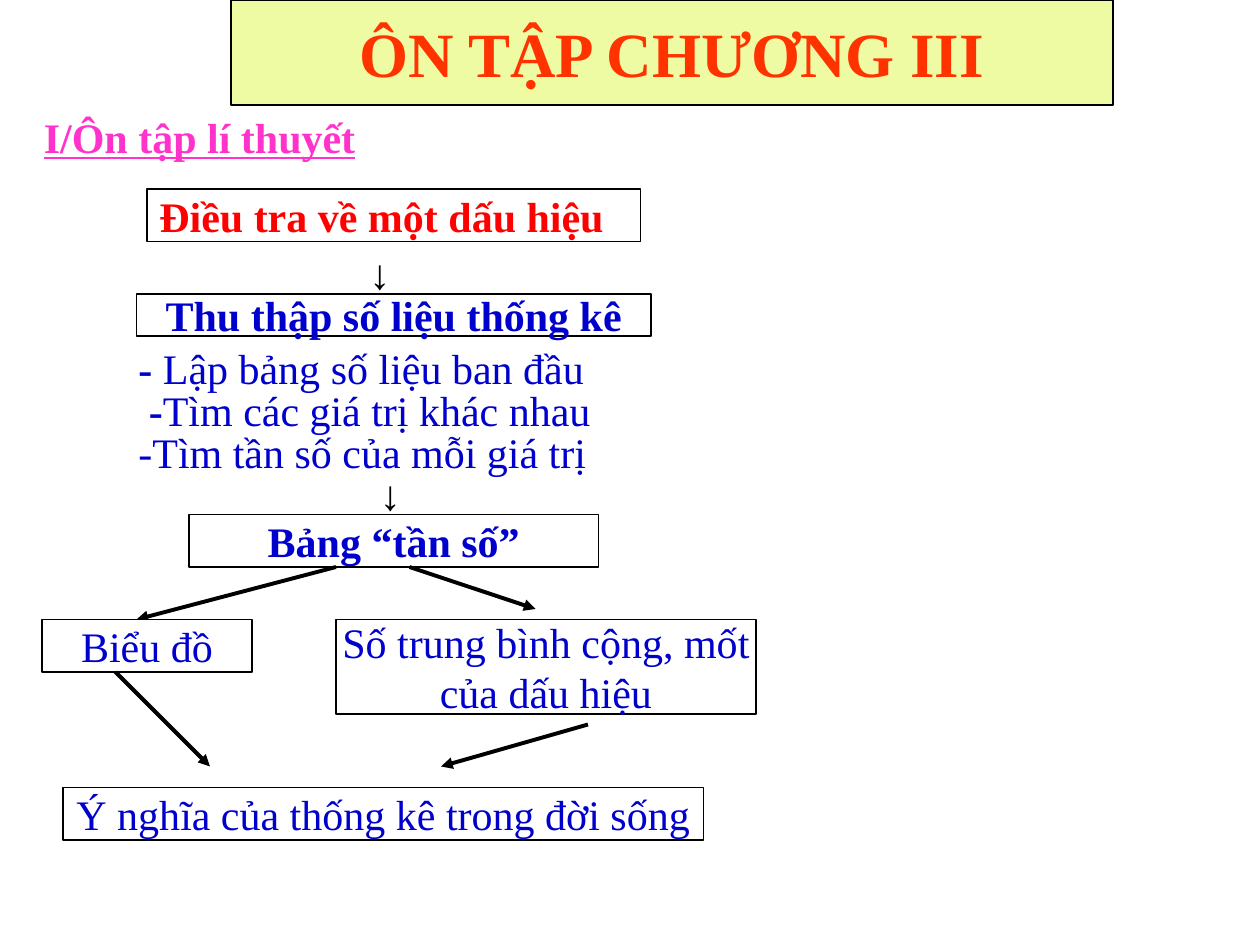
from lxml import etree
from pptx import Presentation
from pptx import util as u
from pptx.dml.color import RGBColor
from pptx.enum import shapes, text
from pptx.oxml.ns import qn

COLORS = {
    "black": "000000", "white": "FFFFFF", "blue": "0000CC", "red": "FF0000",
    "pink": "FF33CC", "orange": "FF3300", "lime": "EEFBA3",
}
GRID = 2.54 / 12  # layout grid step in centimetres


def grid(*steps):
    return [u.Cm(step * GRID) for step in steps]


def color(name):
    return RGBColor.from_string(COLORS[name])


class SlideBuilder:
    font_name = "Times New Roman"
    font_size = 24

    def __init__(self, slide):
        self.slide = slide

    def style(self, paragraph, ink, bold=False, size=None):
        font = paragraph.font
        font.name, font.size = self.font_name, u.Pt(size or self.font_size)
        font.bold, font.color.rgb = bold, color(ink)

    def label(self, area, words, ink="blue", bold=False, underline=False, bold_lead=""):
        """Unframed line of text, optionally with a bold lead-in."""
        shape = self.slide.shapes.add_textbox(*grid(*area))
        frame = shape.text_frame
        frame.word_wrap = True
        frame.auto_size = text.MSO_AUTO_SIZE.SHAPE_TO_FIT_TEXT
        paragraph = frame.paragraphs[0]
        self.style(paragraph, ink, bold)
        paragraph.font.underline = underline
        if bold_lead:
            run = paragraph.add_run()
            run.text, run.font.bold = bold_lead, True
        paragraph.add_run().text = words

    def box(self, area, *lines, ink="blue", bold=False, size=None, fill="white", centered=True):
        """Framed rectangle with one paragraph per line."""
        shape = self.slide.shapes.add_shape(shapes.MSO_SHAPE.RECTANGLE, *grid(*area))
        shape.shadow.inherit = False
        shape.fill.solid()
        shape.fill.fore_color.rgb = color(fill)
        shape.line.color.rgb, shape.line.width = color("black"), u.Pt(0.75)
        frame = shape.text_frame
        frame.word_wrap = not centered
        frame.vertical_anchor = text.MSO_ANCHOR.MIDDLE
        frame.text = "\n".join(lines)
        for paragraph in frame.paragraphs:
            paragraph.alignment = text.PP_ALIGN.CENTER if centered else text.PP_ALIGN.LEFT
            self.style(paragraph, ink, bold, size)

    def arrow(self, start, end):
        connector = self.slide.shapes.add_connector(
            shapes.MSO_CONNECTOR.STRAIGHT, *grid(*start, *end))
        connector.line.color.rgb, connector.line.width = color("black"), u.Pt(2.25)
        etree.SubElement(connector.line._get_or_add_ln(), qn("a:tailEnd"), type="triangle")
        etree.SubElement(connector._element.spPr, qn("a:effectLst"))


def main():
    presentation = Presentation()
    presentation.slide_width, presentation.slide_height = u.Cm(25.4), u.Cm(19.05)
    slide = presentation.slides.add_slide(presentation.slide_layouts[6])
    builder = SlideBuilder(slide)

    # Section heading
    builder.label((3, 10, 65, 6), "I/Ôn tập lí thuyết", "pink", bold=True, underline=True)

    # Survey and data collection
    builder.box((14, 18, 47, 5), "Điều tra về một dấu hiệu", ink="red", bold=True, centered=False)
    builder.label((34, 23, 9, 6), "↓", "black", bold=True)
    builder.box((13, 28, 49, 4), "Thu thập số liệu thống kê", bold=True)

    # Collection steps
    builder.label((12, 32, 51, 6), "Lập bảng số liệu ban đầu", bold_lead="- ")
    builder.label((13, 36, 49, 6), "Tìm các giá trị khác nhau", bold_lead="-")
    builder.label((12, 40, 52, 6), "-Tìm tần số của mỗi giá trị")

    # Frequency table and its two branches
    builder.label((35, 44, 15, 6), "↓", "black", bold=True)
    builder.box((18, 49, 39, 5), "Bảng “tần số”", bold=True)
    builder.arrow((32, 54), (13, 59))
    builder.arrow((39, 54), (51, 58))
    builder.box((4, 59, 20, 5), "Biểu đồ")
    builder.box((32, 59, 40, 9), "Số trung bình cộng, mốt", "của dấu hiệu")

    # Conclusion
    builder.arrow((11, 64), (20, 73))
    builder.arrow((56, 69), (42, 73))
    builder.box((6, 75, 61, 5), "Ý nghĩa của thống kê trong đời sống")

    # Title banner
    builder.box((22, 0, 84, 10), "ÔN TẬP CHƯƠNG III", ink="orange", bold=True, size=36, fill="lime")

    presentation.save("out.pptx")


if __name__ == "__main__":
    main()
